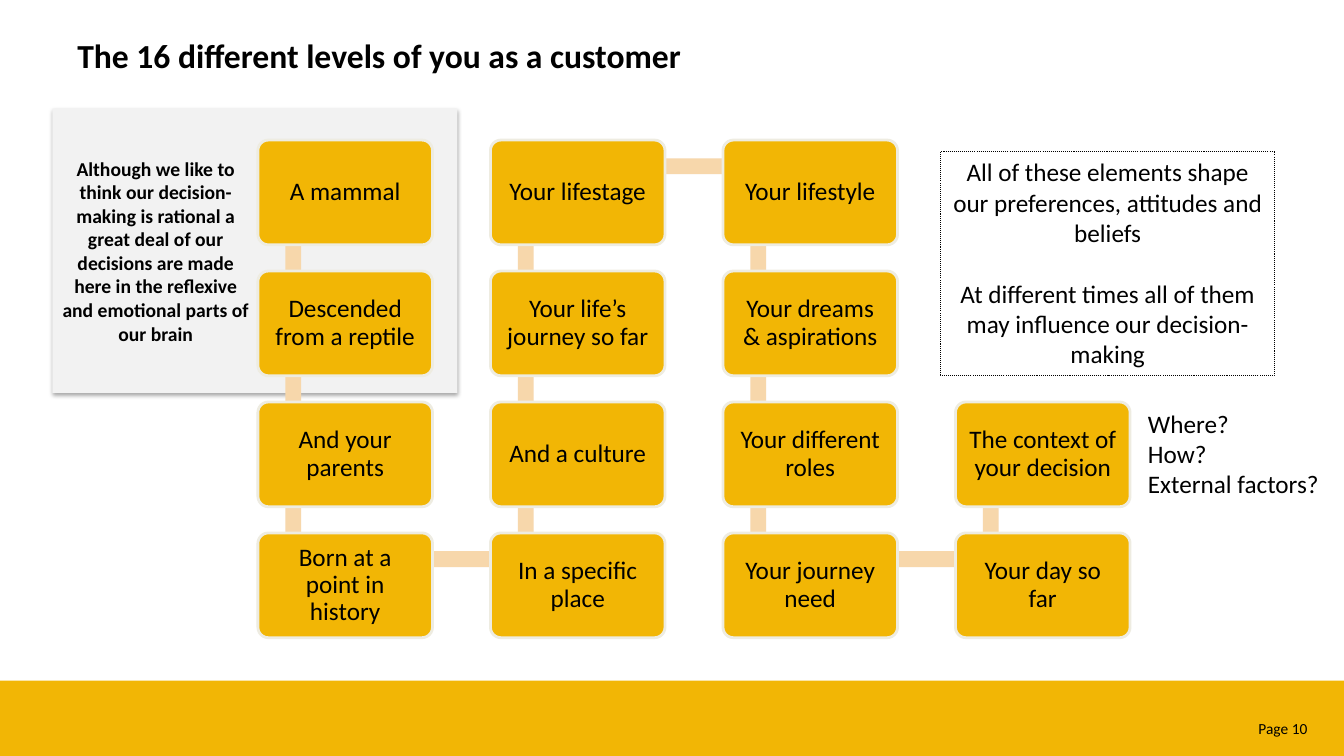
from lxml import etree
from pptx import Presentation
from pptx.dml.color import RGBColor
from pptx.enum.dml import MSO_LINE
from pptx.enum.shapes import MSO_SHAPE
from pptx.enum.text import MSO_ANCHOR, PP_ALIGN
from pptx.oxml.ns import qn
from pptx.util import Cm, Pt

RECT, ROUND = MSO_SHAPE.RECTANGLE, MSO_SHAPE.ROUNDED_RECTANGLE
LEFT, MID, RIGHT = PP_ALIGN.LEFT, PP_ALIGN.CENTER, PP_ALIGN.RIGHT
TOP, CENTER = MSO_ANCHOR.TOP, MSO_ANCHOR.MIDDLE
DOTS = MSO_LINE.ROUND_DOT

LEVELS = [
    (0, 0, "A mammal"),
    (0, 1, "Descended from a reptile"),
    (0, 2, "And your parents"),
    (0, 3, "Born at a point in history"),
    (1, 3, "In a specific place"),
    (1, 2, "And a culture"),
    (1, 1, "Your life’s journey so far"),
    (1, 0, "Your lifestage"),
    (2, 0, "Your lifestyle"),
    (2, 1, "Your dreams & aspirations"),
    (2, 2, "Your different roles"),
    (2, 3, "Your journey need"),
    (3, 3, "Your day so far"),
    (3, 2, "The context of your decision"),
]
GRID_X, GRID_Y = 6.5, 3.53
STEP_X, STEP_Y = 5.86, 3.3
CARD_W, CARD_H = 4.4, 2.64
BAR = 0.4


def color(code):
    return RGBColor.from_string(code)


def write(frame, text, size=18, bold=False, align=MID, anchor=TOP,
          wrap=True, pad=0.13, lead=None, gap=0):
    frame.word_wrap = wrap
    frame.vertical_anchor = anchor
    frame.margin_left = frame.margin_right = Cm(0.25)
    frame.margin_top = frame.margin_bottom = Cm(pad)
    for i, line in enumerate(text.split("\n")):
        para = frame.add_paragraph() if i else frame.paragraphs[0]
        para.text = line
        para.alignment = align
        para.line_spacing = lead
        if i and gap:
            para.space_before = Pt(gap)
        font = para.font
        font.name, font.size, font.bold = "Calibri", Pt(size), bold
        font.color.rgb = color("000000")


class Page:
    gold, sand, gray, edge = "F2B605", "F7D7AB", "F2F2F2", "EEECE1"

    def __init__(self, slide):
        self.slide = slide

    def block(self, x, y, w, h, fill=None, kind=RECT, line=None, width=1):
        shape = self.slide.shapes.add_shape(kind, Cm(x), Cm(y), Cm(w), Cm(h))
        shape.shadow.inherit = False
        if fill:
            shape.fill.solid()
            shape.fill.fore_color.rgb = color(fill)
        else:
            shape.fill.background()
        if line:
            shape.line.color.rgb = color(line)
            shape.line.width = Pt(width)
        else:
            shape.line.fill.background()
        return shape

    def label(self, text, x, y, w, h, **style):
        box = self.slide.shapes.add_textbox(Cm(x), Cm(y), Cm(w), Cm(h))
        write(box.text_frame, text, **style)

    def panel(self, x, y, w, h):
        shape = self.block(x, y, w, h, self.gray)
        effects = shape.element.spPr.find(qn("a:effectLst"))
        shade = etree.SubElement(effects, qn("a:outerShdw"), blurRad=str(Pt(3.1)),
                                 dist=str(Pt(1.8)), dir="5400000", rotWithShape="0")
        tone = etree.SubElement(shade, qn("a:srgbClr"), val="000000")
        etree.SubElement(tone, qn("a:alpha"), val="35000")

    def card(self, text, col, row):
        shape = self.block(GRID_X + col * STEP_X, GRID_Y + row * STEP_Y,
                           CARD_W, CARD_H, self.gold, ROUND, self.edge, 2)
        shape.adjustments[0] = 0.1
        write(shape.text_frame, text, anchor=CENTER, pad=0.25, lead=0.9)

    def link(self, start, end):
        col, row = min(start[0], end[0]), min(start[1], end[1])
        x = GRID_X + col * STEP_X + 0.89
        y = GRID_Y + row * STEP_Y
        if start[0] == end[0]:
            self.block(x - BAR / 2, y + 0.66, BAR, STEP_Y, self.sand)
        else:
            self.block(x, y + 0.46, STEP_X, BAR, self.sand)

    def note(self, text, x, y, w, h):
        shape = self.block(x, y, w, h, line="000000", width=0.75)
        shape.line.dash_style = DOTS
        write(shape.text_frame, text, gap=22)


def main():
    deck = Presentation()
    deck.slide_width, deck.slide_height = Cm(33.87), Cm(19.05)
    page = Page(deck.slides.add_slide(deck.slide_layouts[6]))

    page.block(0, 17.15, 33.87, 1.9, page.gold)
    page.label("Page 10", 30.2, 17.98, 3.0, 0.74, size=11, align=RIGHT)
    page.panel(1.32, 2.74, 10.21, 7.16)
    page.label("The 16 different levels of you as a customer",
               1.7, 0.76, 30.48, 1.98, size=24, bold=True, align=LEFT)

    for start, end in zip(LEVELS, LEVELS[1:]):
        page.link(start, end)
    for col, row, text in LEVELS:
        page.card(text, col, row)

    page.note("All of these elements shape our preferences, attitudes and beliefs\n"
              "At different times all of them may influence our decision-making",
              23.7, 3.82, 8.43, 5.64)
    page.label("Although we like to think our decision-making is rational a great "
               "deal of our decisions are made here in the reflexive and emotional "
               "parts of our brain", 1.32, 3.82, 5.21, 5.05, size=14, bold=True)
    page.label("Where?\nHow?\nExternal factors?", 28.68, 10.16, 4.85, 2.57,
               align=LEFT, wrap=False)
    deck.save("out.pptx")


if __name__ == "__main__":
    main()
